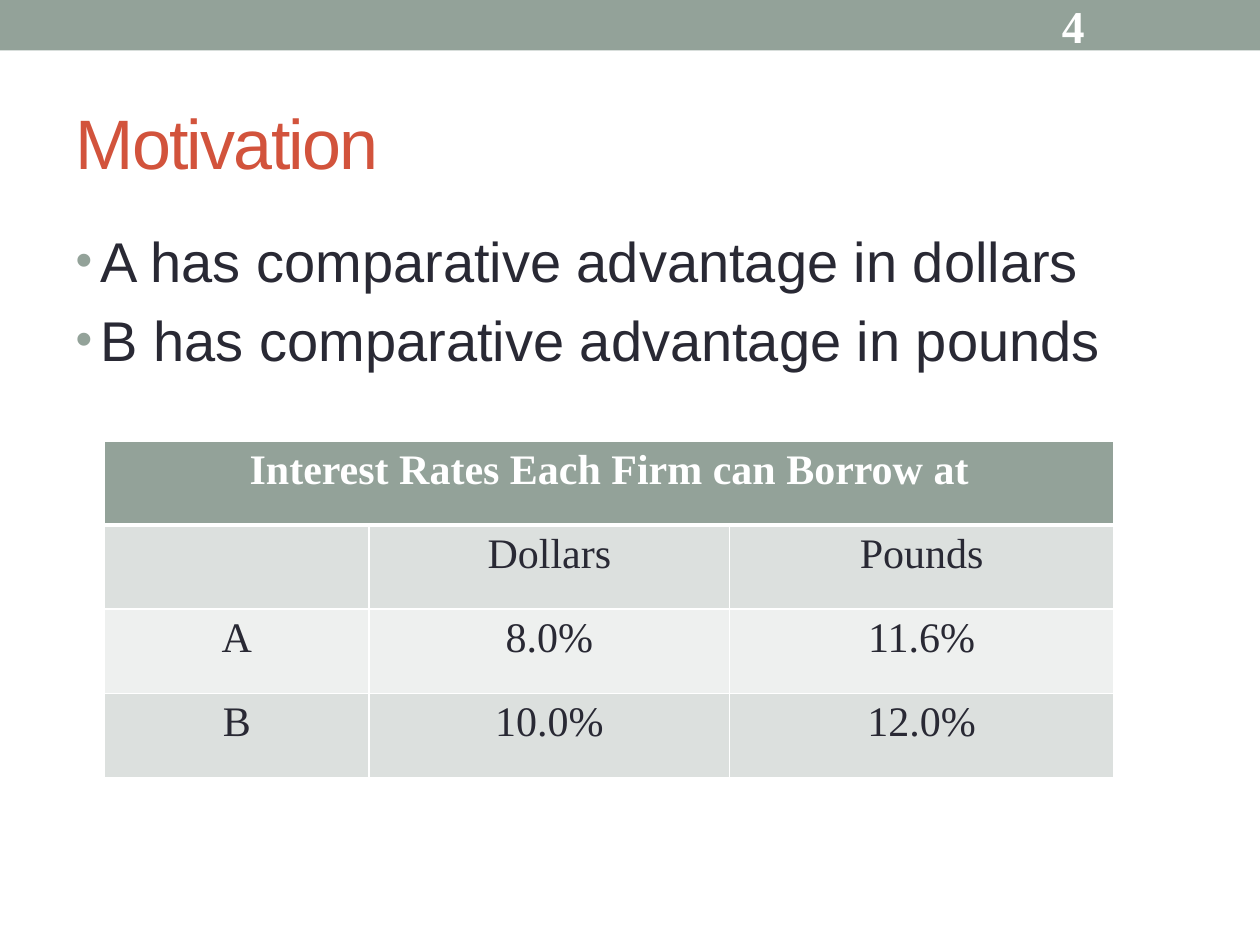
from dataclasses import dataclass

from lxml.etree import SubElement
from pptx import Presentation
from pptx.dml.color import RGBColor
from pptx.enum.shapes import MSO_SHAPE
from pptx.enum.text import MSO_ANCHOR, MSO_AUTO_SIZE, PP_ALIGN
from pptx.oxml import parse_xml
from pptx.oxml.ns import nsdecls, qn
from pptx.util import Inches, Pt

SAGE, RUST, INK, WHITE = "93A299", "D2533C", "292934", "FFFFFF"
BANDS = ("DCE0DE", "EEF0EF")
SANS, SERIF = "Arial", "Times New Roman"


@dataclass
class Area:
    """A rectangle on the slide, in inches."""
    left: float
    top: float
    width: float
    height: float

    def lengths(self) -> tuple:
        """Return the four measures as lengths."""
        return tuple(map(Inches, (self.left, self.top, self.width, self.height)))


@dataclass
class RateRow:
    """One row of the borrowing table."""
    firm: str
    dollars: str
    pounds: str

    def texts(self) -> tuple:
        """Return the cell texts from left to right."""
        return self.firm, self.dollars, self.pounds


def paint(target, color: str) -> None:
    """Give a shape or cell a solid fill."""
    target.fill.solid()
    target.fill.fore_color.rgb = RGBColor.from_string(color)


def write(para, text: str, *, size: float, font: str, color: str,
          bold: bool = False, align=PP_ALIGN.LEFT, spacing: int = 0) -> None:
    """Write formatted text into a paragraph."""
    para.alignment = align
    span = para.add_run()
    span.text = text
    span.font.size, span.font.name, span.font.bold = Pt(size), font, bold
    span.font.color.rgb = RGBColor.from_string(color)
    if spacing:
        span.font._element.set("spc", str(spacing * 100))


def place(box, area: Area, anchor) -> None:
    """Position a text shape and fix its frame."""
    box.left, box.top, box.width, box.height = area.lengths()
    box.text_frame.auto_size = MSO_AUTO_SIZE.NONE
    box.text_frame.word_wrap = True
    box.text_frame.vertical_anchor = anchor


def add_bullet(para) -> None:
    """Give a paragraph a small sage bullet and hanging indent."""
    properties = para._p.get_or_add_pPr()
    properties.set("marL", str(Inches(0.2)))
    properties.set("indent", str(Inches(-0.2)))
    before = SubElement(properties, qn("a:spcBef"))
    SubElement(before, qn("a:spcPct"), val="20000")
    color = SubElement(properties, qn("a:buClr"))
    SubElement(color, qn("a:srgbClr"), val=SAGE)
    SubElement(properties, qn("a:buSzPct"), val="85000")
    SubElement(properties, qn("a:buFont"), typeface=SANS)
    SubElement(properties, qn("a:buChar"), char="•")


def add_borders(cell, top: float = 1, bottom: float = 1) -> None:
    """Draw white borders on the four sides of a cell."""
    sides = {"L": 1, "R": 1, "T": top, "B": bottom}
    properties = cell._tc.get_or_add_tcPr()
    for position, (side, width) in enumerate(sides.items()):
        properties.insert(position, parse_xml(
            f'<a:ln{side} {nsdecls("a")} w="{Pt(width)}"><a:solidFill>'
            f'<a:srgbClr val="{WHITE}"/></a:solidFill></a:ln{side}>'))


def add_rate_table(page, area: Area, heading: str, rows: list[RateRow]) -> None:
    """Add the table with a merged heading and banded rows."""
    table = page.shapes.add_table(len(rows) + 1, 3, *area.lengths()).table
    for column, width in zip(table.columns, (2.1, 2.86, 3.05)):
        column.width = Inches(width)
    for cell in table.rows[0].cells:
        paint(cell, SAGE)
        add_borders(cell, bottom=3)
    table.cell(0, 0).merge(table.cell(0, 2))
    write(table.cell(0, 0).text_frame.paragraphs[0], heading, size=24,
          font=SERIF, color=WHITE, bold=True, align=PP_ALIGN.CENTER)
    for index, row in enumerate(rows, 1):
        for cell, text in zip(table.rows[index].cells, row.texts()):
            paint(cell, BANDS[(index - 1) % 2])
            add_borders(cell, top=3 if index == 1 else 1)
            para = cell.text_frame.paragraphs[0]
            if text:
                write(para, text, size=24, font=SERIF, color=INK,
                      align=PP_ALIGN.CENTER)
            else:
                para.font.size = Pt(24)


def main() -> None:
    """Build and save the slide."""
    deck = Presentation()
    deck.slide_width, deck.slide_height = Inches(10), Inches(7.5)
    page = deck.slides.add_slide(deck.slide_layouts[1])

    band = page.shapes.add_shape(MSO_SHAPE.RECTANGLE, *Area(0, 0, 10, 0.4).lengths())
    band.shadow.inherit = False
    paint(band, SAGE)
    band.line.fill.background()

    title, body = page.placeholders
    place(title, Area(0.5, 0.58, 9, 1.08), MSO_ANCHOR.MIDDLE)
    write(title.text_frame.paragraphs[0], "Motivation", size=40, font=SANS,
          color=RUST, spacing=-1)

    place(body, Area(0.5, 1.75, 9, 5.33), MSO_ANCHOR.TOP)
    frame = body.text_frame
    for index, (firm, currency) in enumerate((("A", "dollars"), ("B", "pounds"))):
        para = frame.add_paragraph() if index else frame.paragraphs[0]
        write(para, f"{firm} has comparative advantage in {currency}",
              size=32, font=SANS, color=INK)
        add_bullet(para)

    number_area = Area(8.33, 0.02, 1.17, 0.36)
    number = page.shapes.add_textbox(*number_area.lengths())
    place(number, number_area, MSO_ANCHOR.MIDDLE)
    write(number.text_frame.paragraphs[0], "4", size=26, font=SERIF,
          color=WHITE, bold=True)

    add_rate_table(page, Area(0.83, 3.5, 8, 2.67),
                   "Interest Rates Each Firm can Borrow at",
                   [RateRow("", "Dollars", "Pounds"),
                    RateRow("A", "8.0%", "11.6%"),
                    RateRow("B", "10.0%", "12.0%")])
    deck.save("out.pptx")


if __name__ == "__main__":
    main()
